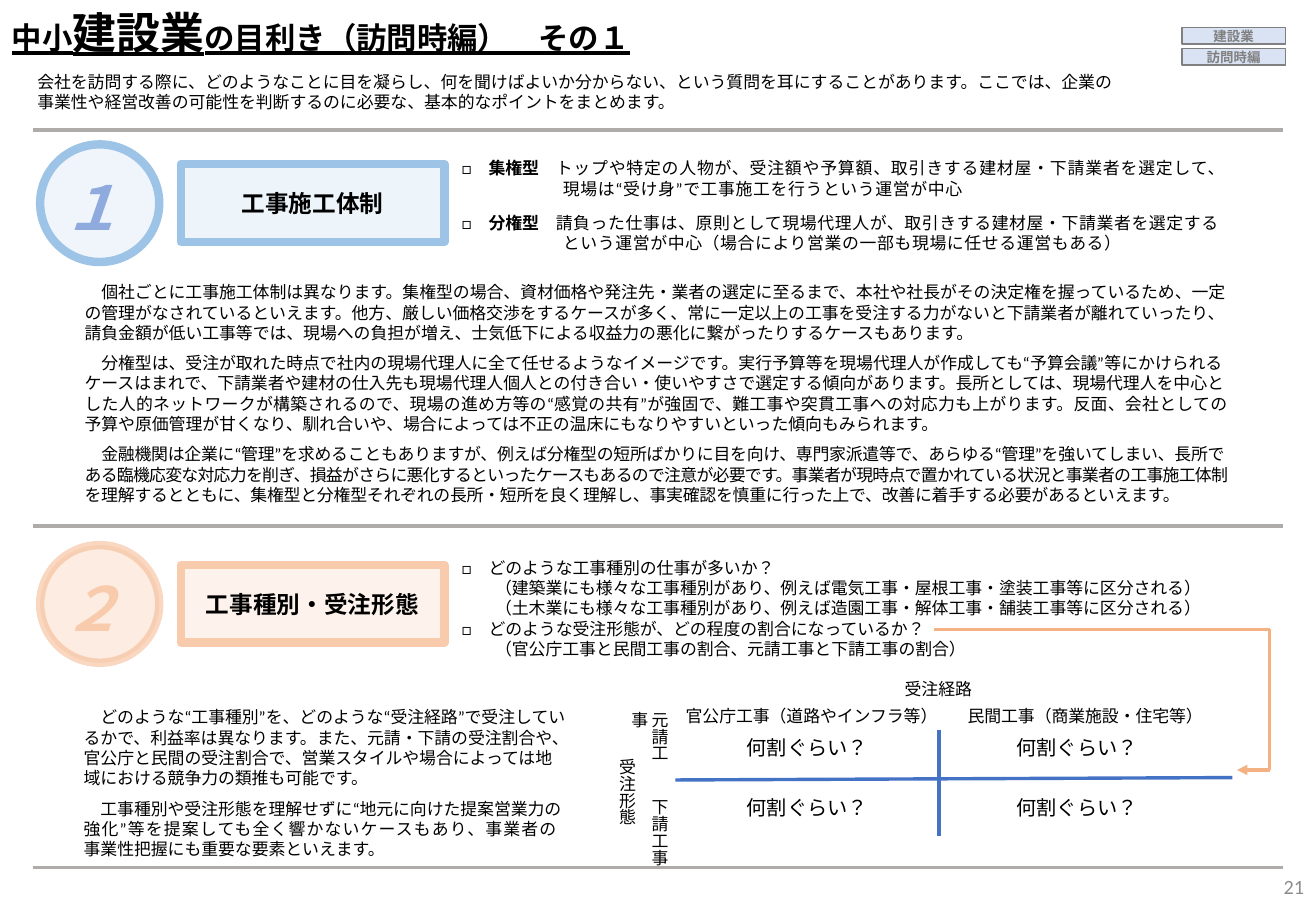
from itertools import pairwise, product

from lxml import etree
from pptx import Presentation
from pptx.dml.color import RGBColor
from pptx.enum import lang, shapes, text
from pptx.oxml.ns import qn
from pptx.util import Cm, Pt

CENTER, RIGHT = text.PP_ALIGN.CENTER, text.PP_ALIGN.RIGHT
CHAR = 0.35  # width of one 10 pt character in cm


def rgb(value):
    return RGBColor.from_string(value)


def set_alpha(fill_format, percent):
    color = fill_format._xPr.find(qn("a:solidFill"))[0]
    etree.SubElement(color, qn("a:alpha"), val=str(percent * 1000))


def add_para(tf, runs, size=10, font="Calibri", color="000000", bold=False, italic=False,
             underline=False, align=None, left=0, first=0, after=0):
    """Add a paragraph; runs is a string or a list of (text, overrides)."""
    p = tf.add_paragraph() if tf.text else tf.paragraphs[0]
    p.alignment = align
    p.space_after = Pt(after)
    pPr = p._p.get_or_add_pPr()
    pPr.set("marL", str(Cm(left)))
    pPr.set("indent", str(Cm(first)))
    for content, over in [(runs, {})] if isinstance(runs, str) else runs:
        r = p.add_run()
        r.text = content
        f = r.font
        f.name, f.size = font, Pt(over.get("size", size))
        f.bold, f.italic, f.underline = over.get("bold", bold), italic, underline
        f.color.rgb = rgb(color)
        f.language_id = lang.MSO_LANGUAGE_ID.JAPANESE
        rPr = r._r.get_or_add_rPr()
        etree.SubElement(rPr, qn("a:ea"), typeface="Calibri")
        if "spc" in over:
            rPr.set("spc", str(round(over["spc"] * 100)))


def add_text(slide, x, y, w, h, paras, vertical=False, middle=False, **fmt):
    """Add a text box; paras is a string or a list of paragraph contents."""
    tf = slide.shapes.add_textbox(Cm(x), Cm(y), Cm(w), Cm(h)).text_frame
    tf.word_wrap = True
    if vertical:
        tf._txBody.bodyPr.set("vert", "eaVert")
    if middle:
        tf.vertical_anchor = text.MSO_ANCHOR.MIDDLE
    for para in [paras] if isinstance(paras, str) else paras:
        add_para(tf, para, **fmt)
    return tf


def add_box(slide, kind, x, y, w, h, fill, line, width, fill_alpha=100, line_alpha=100):
    sp = slide.shapes.add_shape(kind, Cm(x), Cm(y), Cm(w), Cm(h))
    sp.shadow.inherit = False
    sp.fill.solid()
    sp.fill.fore_color.rgb = rgb(fill)
    set_alpha(sp.fill, fill_alpha)
    sp.line.width = Pt(width)
    sp.line.color.rgb = rgb(line)
    set_alpha(sp.line.fill, line_alpha)
    sp.text_frame.vertical_anchor = text.MSO_ANCHOR.MIDDLE
    return sp


def add_line(slide, start, end, color, width):
    cx = slide.shapes.add_connector(shapes.MSO_CONNECTOR.STRAIGHT,
                                    *(Cm(v) for v in (*start, *end)))
    cx.line.color.rgb = rgb(color)
    cx.line.width = Pt(width)
    etree.SubElement(cx._element.spPr, qn("a:effectLst"))
    return cx


def page_header(slide, x, y):
    title = [("中小", {}), ("建設業", {"size": 26}), ("の目利き（訪問時編）　その１", {})]
    add_text(slide, x, y, 17.91, 1.37, [title], size=18, font="Arial", bold=True, underline=True)
    add_text(slide, x + 0.53, y + 1.37, 23.29, 1.12,
             "会社を訪問する際に、どのようなことに目を凝らし、何を聞けばよいか分からない、という質問を耳にすることがあります。"
             "ここでは、企業の事業性や経営改善の可能性を判断するのに必要な、基本的なポイントをまとめます。")
    for i, tag in enumerate(["建設業", "訪問時編"]):
        sp = add_box(slide, shapes.MSO_SHAPE.RECTANGLE, x + 24.71, y + 0.58 + 0.44 * i,
                     2.16, 0.34, "DAE3F3", "808080", 0.75)
        tf = sp.text_frame
        tf.margin_left = tf.margin_right = tf.margin_top = tf.margin_bottom = 0
        add_para(tf, tag, size=8, color="808080", bold=True, align=CENTER)


def section_heading(slide, x, y, number, number_color, heading, circle, frame):
    """circle and frame hold fill, line and opacity of the two shapes."""
    sp = add_box(slide, shapes.MSO_SHAPE.OVAL, x, y, 2.49, 2.46, **circle, width=5)
    add_text(slide, x + 0.2, y + 0.41, 3.02, 1.8, number, size=36, font="Arial",
             color=number_color, bold=True, italic=True)
    sp = add_box(slide, shapes.MSO_SHAPE.RECTANGLE, x + 2.94, y + 0.41, 5.51, 1.63,
                 **frame, width=5)
    add_para(sp.text_frame, heading, size=14, bold=True, align=CENTER)


def organisation_section(slide, x, y):
    section_heading(slide, x, y, "１", "8FAADC", "工事施工体制",
                    dict(fill="BDD7EE", line="9DC3E6", fill_alpha=23),
                    dict(fill="BDD7EE", line="9DC3E6", fill_alpha=26))
    kinds = [
        ("集権型", "トップや特定の人物が、受注額や予算額、取引きする建材屋・下請業者を選定して、", 0.5,
         "現場は“受け身”で工事施工を行うという運営が中心"),
        ("分権型", "請負った仕事は、原則として現場代理人が、取引きする建材屋・下請業者を選定する", 0.4,
         "という運営が中心（場合により営業の一部も現場に任せる運営もある）"),
    ]
    for i, (name, line1, spacing, line2) in enumerate(kinds):
        tf = add_text(slide, x + 8.56, y + 0.16 + 1.14 * i, 17.3, 1.12,
                      [[("□　", {}), (name + "　", {"bold": True}), (line1, {"spc": spacing})]],
                      font="Arial")
        add_para(tf, [(line2, {"spc": 0.4})], font="Arial", left=2.12)
    add_text(slide, x + 0.68, y + 2.75, 24.64, 4.95, [
        "個社ごとに工事施工体制は異なります。集権型の場合、資材価格や発注先・業者の選定に至るまで、本社や社長がその決定権を"
        "握っているため、一定の管理がなされているといえます。他方、厳しい価格交渉をするケースが多く、常に一定以上の工事を受注"
        "する力がないと下請業者が離れていったり、請負金額が低い工事等では、現場への負担が増え、士気低下による収益力の悪化に"
        "繋がったりするケースもあります。",
        [("分権型は、受注が取れた時点で社内の現場代理人に全て任せるようなイメージです。実行予算等を現場代理人が作成しても"
          "“予算会議”等にかけられるケースはまれで、下請業者や建材の仕入先も現場代理人個人との付き合い・使いやすさで選定する"
          "傾向があります。長所としては、現場代理人を中心と", {}),
         ("した人的ネットワークが構築されるので、現場の進め方等の“感覚の共有”が強固で、難工事や突貫工事への対応力も"
          "上がります。反面、会社としての", {"spc": 0.2}),
         ("予算や原価管理が甘くなり、馴れ合いや、場合によっては不正の温床にもなりやすいといった傾向もみられます。", {})],
        [("金融機関は企業に“管理”を求めることもありますが、例えば分権型の短所ばかりに目を向け、専門家派遣等で、"
          "あらゆる“管理”を強いてしまい、長所で", {"spc": -0.1}),
         ("ある臨機応変な対応力を削ぎ、損益がさらに悪化するといったケースもあるので注意が必要です。事業者が現時点で"
          "置かれている状況と事業者の工事施工体制", {"spc": -0.4}),
         ("を理解するとともに、集権型と分権型それぞれの長所・短所を良く理解し、事実確認を慎重に行った上で、改善に着手する"
          "必要があるといえます。", {"spc": -0.1})],
    ], font="Arial", first=CHAR, after=6)


def order_section(slide, x, y):
    section_heading(slide, x, y, "２", "F8CBAD", "工事種別・受注形態",
                    dict(fill="F4B183", line="F4B183", fill_alpha=23, line_alpha=49),
                    dict(fill="F8CBAD", line="F8CBAD", fill_alpha=22))
    tf = add_text(slide, x + 8.56, y + 0.13, 17.58, 2.39, [])
    for line in ["□　どのような工事種別の仕事が多いか？",
                 "（建築業にも様々な工事種別があり、例えば電気工事・屋根工事・塗装工事等に区分される）",
                 "（土木業にも様々な工事種別があり、例えば造園工事・解体工事・舗装工事等に区分される）",
                 "□　どのような受注形態が、どの程度の割合になっているか？",
                 "（官公庁工事と民間工事の割合、元請工事と下請工事の割合）"]:
        add_para(tf, line, font="Arial", left=0 if line.startswith("□") else 2 * CHAR)
    add_text(slide, x + 0.66, y + 3.26, 10.62, 3.45, [
        "どのような“工事種別”を、どのような“受注経路”で受注しているかで、利益率は異なります。また、元請・下請の受注割合や、"
        "官公庁と民間の受注割合で、営業スタイルや場合によっては地域における競争力の類推も可能です。",
        [("工事種別や受注形態を理解せずに“地元に向けた提案営業力の", {}),
         ("強化”等を提案しても全く響かないケースもあり、事業者の", {"spc": 0.7}),
         ("事業性把握にも重要な要素といえます。", {})],
    ], first=CHAR, after=6)
    order_matrix(slide, x + 11.58, y + 2.67)
    bends = [(18.69, 1.76), (25.7, 1.76), (25.7, 4.7), (25.02, 4.7)]
    for start, end in pairwise((x + dx, y + dy) for dx, dy in bends):
        cx = add_line(slide, start, end, "F4B183", 2)
    etree.SubElement(cx.line._get_or_add_ln(), qn("a:tailEnd"), type="triangle")


def order_matrix(slide, x, y):
    for label, dx, dy, w in [("受注経路", 2.46, 0, 9.47),
                             ("官公庁工事（道路やインフラ等）", 1.6, 0.56, 5.89),
                             ("民間工事（商業施設・住宅等）", 7.37, 0.56, 5.79)]:
        add_text(slide, x + dx, y + dy, w, 0.69, label, align=CENTER)
    for label, dx, dy, w, h in [("受注形態", 0.08, 1.55, 0.94, 2.31),
                                ("元請工事", 0, 0.56, 1.7, 1.68),
                                ("下請工事", 0.76, 2.39, 0.94, 1.93)]:
        add_text(slide, x + dx, y + dy, w, h, label, vertical=True)
    add_line(slide, (x + 1.7, y + 2.24), (x + 13.34, y + 2.19), "4472C4", 2)
    add_line(slide, (x + 7.21, y + 1.2), (x + 7.21, y + 3.41), "4472C4", 2)
    for row, col in product(range(2), repeat=2):
        add_text(slide, x + 2.06 + 5.64 * col, y + 1.19 + 1.25 * row, 4.8, 0.76,
                 "何割ぐらい？", size=12, align=CENTER)


def main():
    prs = Presentation()
    prs.slide_width, prs.slide_height = Cm(27.51), Cm(19.05)
    slide = prs.slides.add_slide(prs.slide_layouts[6])
    for y in (2.72, 11, 18.14):
        add_line(slide, (0.7, y), (26.81, y), "AFABAB", 2.25)
    page_header(slide, 0, 0)
    organisation_section(slide, 0.84, 3.02)
    order_section(slide, 0.84, 11.4)
    add_text(slide, 26.16, 18.03, 1.35, 1.02, "21", middle=True, size=12, color="8C8C8C",
             align=RIGHT)
    prs.save("out.pptx")


if __name__ == "__main__":
    main()
